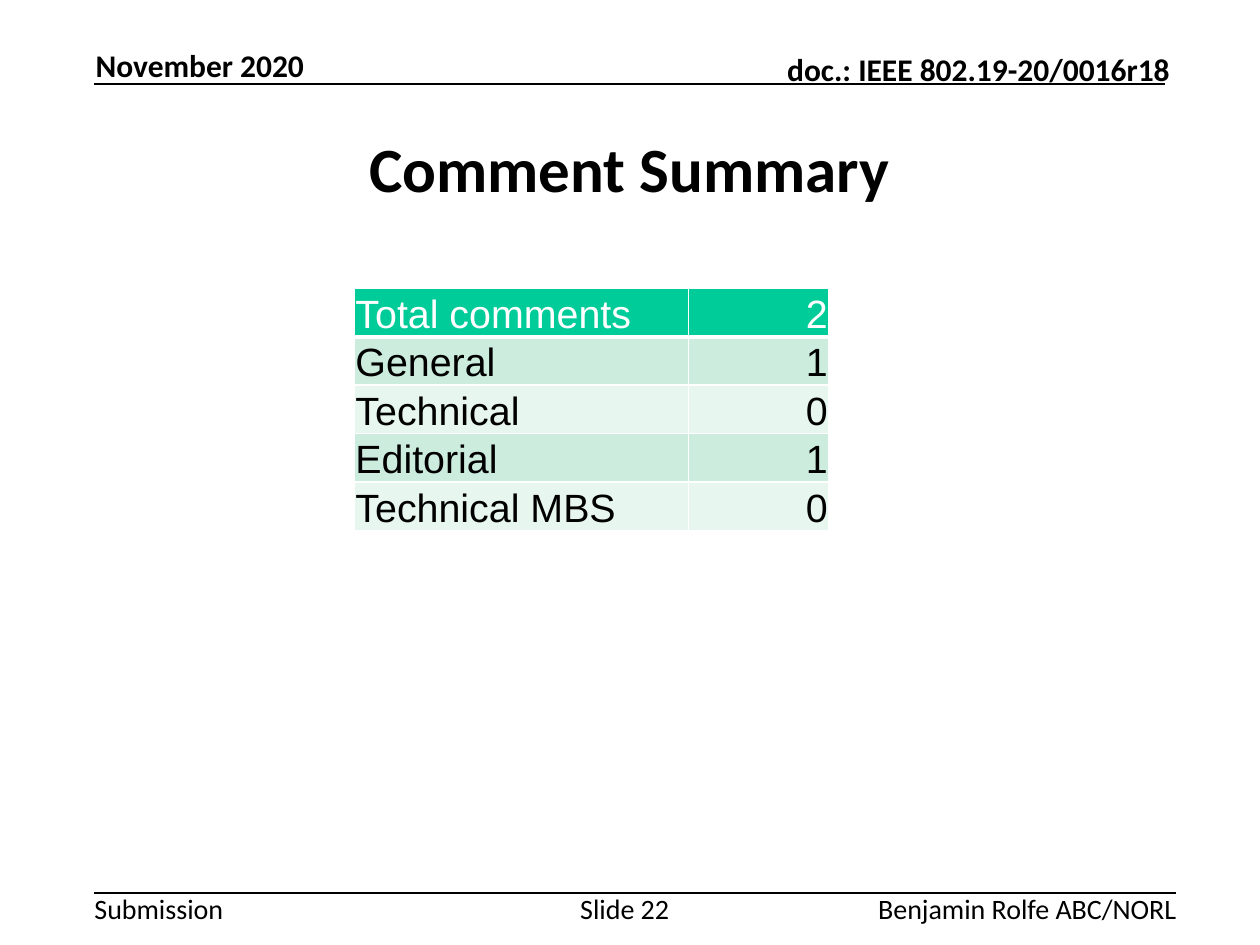
from lxml import etree
from pptx import Presentation
from pptx.dml.color import RGBColor
from pptx.enum.shapes import MSO_CONNECTOR
from pptx.enum.text import MSO_ANCHOR, PP_ALIGN
from pptx.oxml.ns import qn
from pptx.util import Inches, Pt

BLACK = RGBColor(0x00, 0x00, 0x00)
WHITE = RGBColor(0xFF, 0xFF, 0xFF)
GREEN = RGBColor(0x00, 0xCC, 0x99)
MINT = RGBColor(0xCC, 0xEC, 0xDE)
PALE_MINT = RGBColor(0xE7, 0xF6, 0xEF)
LEFT, CENTER, RIGHT = PP_ALIGN.LEFT, PP_ALIGN.CENTER, PP_ALIGN.RIGHT
TOP, MIDDLE, BOTTOM = MSO_ANCHOR.TOP, MSO_ANCHOR.MIDDLE, MSO_ANCHOR.BOTTOM
STRAIGHT = MSO_CONNECTOR.STRAIGHT


class SlideBuilder:
    """Draws the elements of one slide in a shared style."""

    heading_font = "Calibri"
    table_font = "Arial"

    def __init__(self, slide):
        self.slide = slide

    def format(self, paragraph, font_name, size, color=BLACK, bold=False, align=LEFT):
        paragraph.alignment = align
        font = paragraph.font
        font.name, font.size, font.bold = font_name, Pt(size), bold
        font.color.rgb = color

    def title(self, text, left, top, width, height):
        title = self.slide.shapes.title
        title.left, title.top = Inches(left), Inches(top)
        title.width, title.height = Inches(width), Inches(height)
        title.text_frame.text = text
        title.text_frame.vertical_anchor = MIDDLE
        self.format(title.text_frame.paragraphs[0], self.heading_font, 38.4,
                    bold=True, align=CENTER)

    def label(self, text, left, top, width, height, size, align=LEFT,
              bold=False, anchor=TOP):
        box = self.slide.shapes.add_textbox(
            Inches(left), Inches(top), Inches(width), Inches(height))
        frame = box.text_frame
        frame.margin_left = frame.margin_right = 0
        frame.margin_top = frame.margin_bottom = 0
        frame.word_wrap = True
        frame.vertical_anchor = anchor
        frame.text = text
        self.format(frame.paragraphs[0], self.heading_font, size, bold=bold, align=align)

    def rule(self, left, right, y):
        line = self.slide.shapes.add_connector(
            STRAIGHT, Inches(left), Inches(y), Inches(right), Inches(y))
        line.line.color.rgb = BLACK
        line.line.width = Pt(1)
        etree.SubElement(line._element.spPr, qn("a:effectLst"))

    def borders(self, cell, widths):
        properties = cell._tc.get_or_add_tcPr()
        for position, (side, width) in enumerate(widths.items()):
            border = etree.Element(qn(f"a:ln{side}"), w=str(Pt(width)))
            fill = etree.SubElement(border, qn("a:solidFill"))
            etree.SubElement(fill, qn("a:srgbClr"), val=str(WHITE))
            properties.insert(position, border)

    def cell(self, cell, text, align, fill, color, widths):
        cell.text = text
        cell.vertical_anchor = BOTTOM
        cell.margin_left = cell.margin_right = cell.margin_top = Inches(0.01)
        cell.margin_bottom = 0
        cell.fill.solid()
        cell.fill.fore_color.rgb = fill
        self.format(cell.text_frame.paragraphs[0], self.table_font, 24, color, align=align)
        self.borders(cell, widths)

    def table(self, rows, left, top, column_widths, row_height):
        table = self.slide.shapes.add_table(
            len(rows), len(column_widths), Inches(left), Inches(top),
            Inches(sum(column_widths)), Inches(row_height * len(rows))).table
        for column, width in zip(table.columns, column_widths):
            column.width = Inches(width)
        for r, values in enumerate(rows):
            table.rows[r].height = Inches(row_height)
            fill = GREEN if r == 0 else MINT if r % 2 else PALE_MINT
            color = WHITE if r == 0 else BLACK
            widths = {"L": 1, "R": 1, "T": 3 if r == 1 else 1, "B": 3 if r == 0 else 1}
            for c, (value, align) in enumerate(zip(values, (LEFT, RIGHT))):
                self.cell(table.cell(r, c), value, align, fill, color, widths)


def main():
    presentation = Presentation()
    presentation.slide_width, presentation.slide_height = Inches(10.67), Inches(8)
    page = SlideBuilder(presentation.slides.add_slide(presentation.slide_layouts[5]))

    page.rule(0.8, 9.87, 0.71)
    page.rule(0.8, 9.96, 7.56)
    page.label("November 2020", 0.81, 0.39, 2.19, 0.32, 19.2, bold=True, anchor=BOTTOM)
    page.label("doc.: IEEE 802.19-20/0016r18", 5.83, 0.42, 4.08, 0.32, 19.2,
               RIGHT, bold=True, anchor=BOTTOM)
    page.title("Comment Summary", 0.8, 0.8, 9.06, 1.24)

    comment_counts = [
        ("Total comments", "2"),
        ("General", "1"),
        ("Technical", "0"),
        ("Editorial", "1"),
        ("Technical MBS", "0"),
    ]
    page.table(comment_counts, 3, 2.44, (2.83, 1.19), 0.41)

    page.label("Submission", 0.8, 7.55, 1.12, 0.29, 17.1)
    page.label("Slide 22", 4.89, 7.55, 0.8, 0.42, 17.1, CENTER)
    page.label("Benjamin Rolfe ABC/NORL", 6.25, 7.55, 3.71, 0.27, 17.1, RIGHT)
    presentation.save("out.pptx")


if __name__ == "__main__":
    main()
